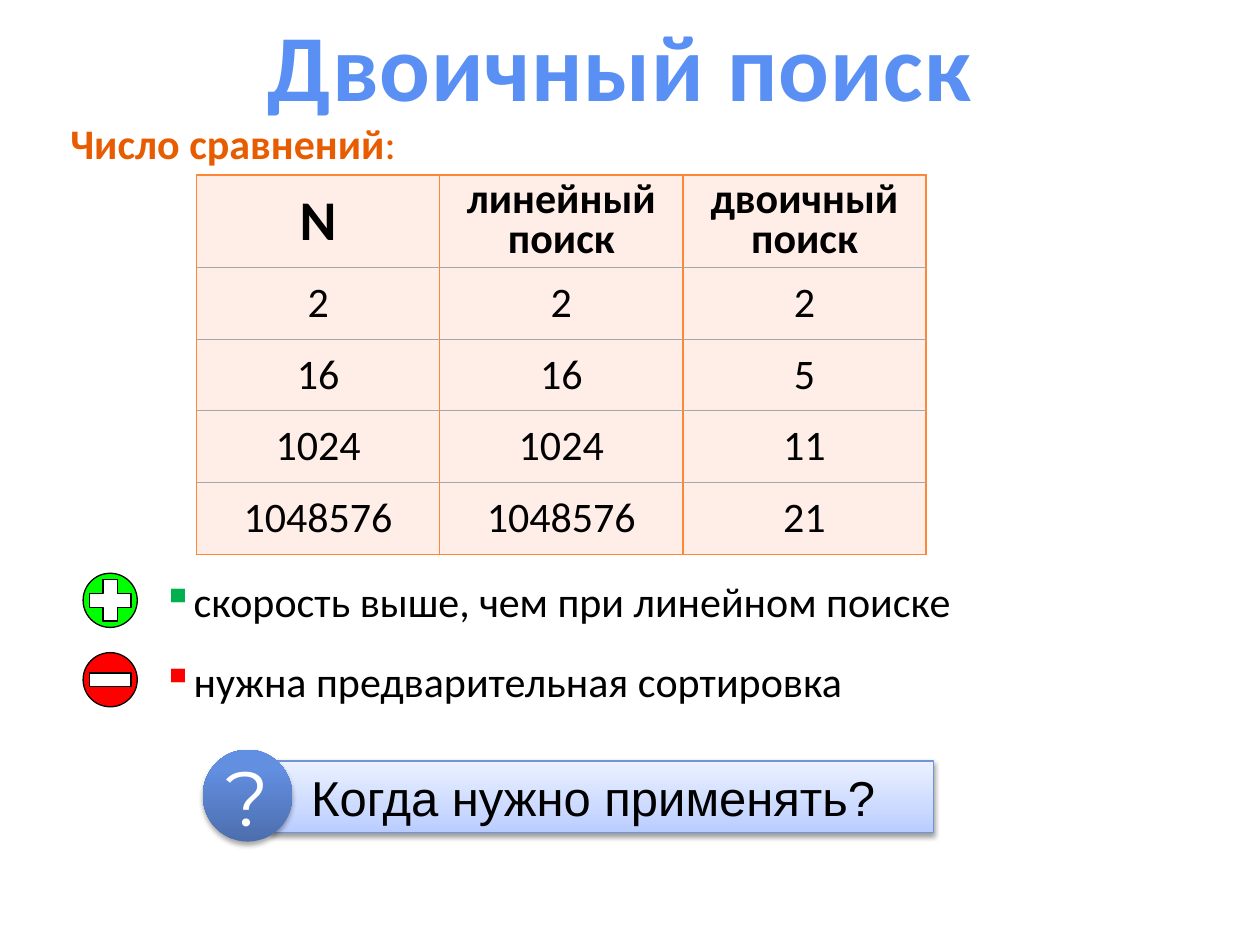
from lxml import etree
from pptx import Presentation
from pptx.dml.color import RGBColor
from pptx.enum.shapes import MSO_SHAPE
from pptx.enum.text import MSO_ANCHOR, PP_ALIGN
from pptx.oxml.ns import qn
from pptx.util import Inches, Pt

CENTER, MIDDLE = PP_ALIGN.CENTER, MSO_ANCHOR.MIDDLE
OVAL, RECTANGLE, CROSS = MSO_SHAPE.OVAL, MSO_SHAPE.RECTANGLE, MSO_SHAPE.CROSS
BLACK, WHITE, ORANGE, GRAY, PINK = "000000", "FFFFFF", "FE8637", "A6A6A6", "FFEDE8"

TITLE = "Двоичный поиск"
SUBTITLE = [("Число сравнений", True), (":", False)]
ROWS = [
    ("N", "линейный поиск", "двоичный поиск"),
    ("2", "2", "2"),
    ("16", "16", "5"),
    ("1024", "1024", "11"),
    ("1048576", "1048576", "21"),
]
POINTS = [
    ("скорость выше, чем при линейном поиске", 4.52, 7.18, "00B050", "00FF00", CROSS, 0.33),
    ("нужна предварительная сортировка", 5.15, 6.34, "FF0000", "FF0000", RECTANGLE, 0.11),
]
QUESTION = "Когда нужно применять?"
BOX_GRADIENT = [(0, "B8CCFF"), (35, "CCDAFF"), (100, "EBF1FF")]
BALL_GRADIENT = [(0, "4C6EAD"), (80, "638FE1"), (100, "618FE4")]


def color(value):
    return RGBColor.from_string(value)


def child(parent, tag, **attributes):
    return etree.SubElement(parent, qn(tag), {key: str(item) for key, item in attributes.items()})


def style(font, size, value=BLACK, name="Calibri", bold=False):
    font.name, font.size, font.bold = name, Pt(size), bold
    font.color.rgb = color(value)


def add_text(shapes, left, top, width, height):
    box = shapes.add_textbox(Inches(left), Inches(top), Inches(width), Inches(height))
    box.text_frame.word_wrap = True
    return box.text_frame.paragraphs[0]


def add_shape(shapes, preset, left, top, width, height, fill=None, line=None):
    shape = shapes.add_shape(preset, Inches(left), Inches(top), Inches(width), Inches(height))
    shape.shadow.inherit = False
    if fill:
        shape.fill.solid()
        shape.fill.fore_color.rgb = color(fill)
    if line:
        shape.line.color.rgb = color(line)
        shape.line.width = Pt(0.75)
    else:
        shape.line.fill.background()
    return shape


def add_gradient(shape, stops):
    gradient = etree.Element(qn("a:gradFill"), rotWithShape="1")
    stop_list = child(gradient, "a:gsLst")
    for position, value in stops:
        stop = child(stop_list, "a:gs", pos=position * 1000)
        child(stop, "a:srgbClr", val=value)
    child(gradient, "a:lin", ang=270 * 60000, scaled=0)
    shape._element.spPr.find(qn("a:prstGeom")).addnext(gradient)


def add_shadow(shape, alpha, distance):
    effects = shape._element.spPr.find(qn("a:effectLst"))
    shadow = child(effects, "a:outerShdw", blurRad=Pt(3.1), dist=Pt(distance), dir=90 * 60000, rotWithShape=0)
    child(child(shadow, "a:srgbClr", val=BLACK), "a:alpha", val=alpha * 1000)


def add_borders(cell, is_first, is_last):
    properties = cell._tc.get_or_add_tcPr()
    edges = [("L", True), ("R", True), ("T", is_first), ("B", is_last)]
    for index, (side, is_strong) in enumerate(edges):
        border = etree.Element(qn(f"a:ln{side}"), w=str(Pt(1 if is_strong else 0.5)))
        child(child(border, "a:solidFill"), "a:srgbClr", val=ORANGE if is_strong else GRAY)
        properties.insert(index, border)


def add_comparison_table(shapes):
    header, body, column = 0.72, 0.57, 1.93
    count = len(ROWS)
    height = header + body * (count - 1)
    table = shapes.add_table(count, 3, Inches(1.56), Inches(1.39), Inches(column * 3), Inches(height)).table
    for row, texts in enumerate(ROWS):
        table.rows[row].height = Inches(body if row else header)
        for index, text in enumerate(texts):
            cell = table.cell(row, index)
            is_heading = row == 0 and index > 0
            cell.text = text
            cell.vertical_anchor = MIDDLE
            cell.margin_left = cell.margin_right = Inches(0.07)
            cell.margin_top = cell.margin_bottom = Inches(0.04 if is_heading else 0)
            cell.fill.solid()
            cell.fill.fore_color.rgb = color(PINK)
            para = cell.text_frame.paragraphs[0]
            para.alignment = CENTER
            if is_heading:
                para.line_spacing = 0.8
            style(para.font, 32 if text == "N" else 24, bold=row == 0)
            add_borders(cell, row == 0, row == count - 1)


def add_point(shapes, text, top, width, bullet, badge, sign, sign_height):
    para = add_text(shapes, 1.19, top, width, 0.5)
    para.text = text
    style(para.font, 24)
    properties = para._p.get_or_add_pPr()
    properties.set("marL", str(Inches(0.19)))
    properties.set("indent", str(-Inches(0.19)))
    mark_color = etree.Element(qn("a:buClr"))
    child(mark_color, "a:srgbClr", val=bullet)
    properties.insert(0, mark_color)
    mark = etree.Element(qn("a:buChar"), char="▪")
    mark_color.addnext(mark)
    group = shapes.add_group_shape().shapes
    badge_top, size, sign_width = top + 0.03, 0.43, 0.33
    add_shape(group, OVAL, 0.66, badge_top, size, size, badge, BLACK)
    sign_top = badge_top + (size - sign_height) / 2
    symbol = add_shape(group, sign, 0.71, sign_top, sign_width, sign_height, WHITE, BLACK)
    if sign == CROSS:
        symbol.adjustments[0] = 0.33


def add_question(shapes):
    group = shapes.add_group_shape().shapes
    box = add_shape(group, RECTANGLE, 2.15, 6.04, 5.26, 0.57, line="7094D7")
    add_gradient(box, BOX_GRADIENT)
    add_shadow(box, 38, 1.6)
    box.text_frame.margin_left = Inches(0.32)
    para = box.text_frame.paragraphs[0]
    para.text = QUESTION
    para.alignment = PP_ALIGN.LEFT
    style(para.font, 28, name="Arial")
    ball = add_shape(group, OVAL, 1.61, 5.95, 0.71, 0.73)
    add_gradient(ball, BALL_GRADIENT)
    add_shadow(ball, 35, 1.8)
    ball.text_frame.word_wrap = False
    ball.text_frame.vertical_anchor = MIDDLE
    para = ball.text_frame.paragraphs[0]
    para.text = "?"
    para.alignment = CENTER
    style(para.font, 44, WHITE, "Montserrat")


def main():
    deck = Presentation()
    deck.slide_width, deck.slide_height = Inches(10), Inches(7.5)
    page = deck.slides.add_slide(deck.slide_layouts[5])
    title = page.shapes.title
    title.left, title.top, title.width, title.height = Inches(0), Inches(0.16), Inches(9.84), Inches(0.69)
    title.text = TITLE
    title.text_frame.vertical_anchor = MIDDLE
    para = title.text_frame.paragraphs[0]
    para.alignment = CENTER
    style(para.font, 54, "5A90F4", bold=True)
    para.runs[0].font._element.set("spc", "50")

    add_comparison_table(page.shapes)
    for point in POINTS:
        add_point(page.shapes, *point)
    add_question(page.shapes)
    para = add_text(page.shapes, 0.46, 0.88, 4.39, 0.51)
    for text, is_bold in SUBTITLE:
        span = para.add_run()
        span.text = text
        style(span.font, 24, "E75C01", bold=is_bold)
    deck.save("out.pptx")


if __name__ == "__main__":
    main()
